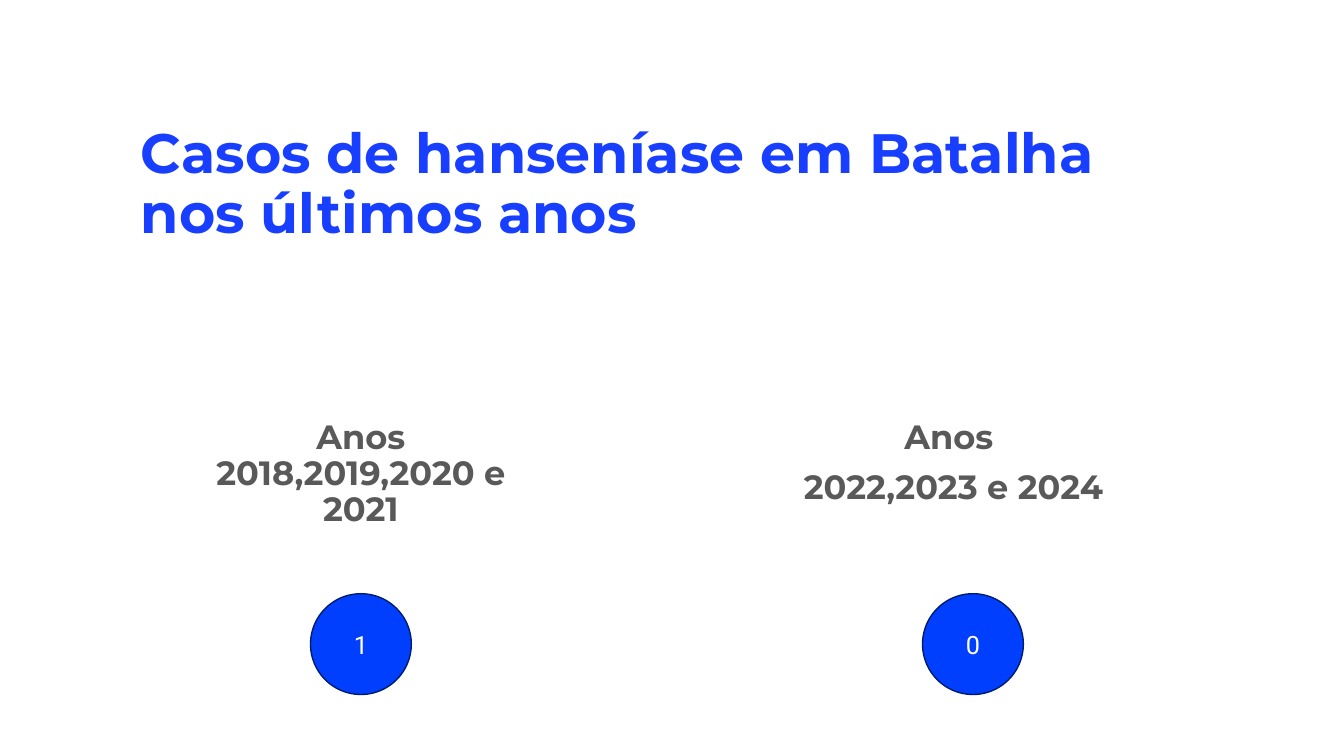
from pptx import Presentation
from pptx.dml.color import RGBColor
from pptx.enum.shapes import MSO_SHAPE
from pptx.enum.text import MSO_ANCHOR, PP_ALIGN
from pptx.util import Inches, Pt

TITLE = "Casos de hanseníase em Batalha nos últimos anos"
# Label lines, label left, number of cases, circle left
PERIODS = [
    (["Anos 2018,2019,2020 e 2021"], 1.81, "1", 3.08),
    (["Anos", " 2022,2023 e 2024"], 7.64, "0", 9.15),
]
COLORS = {
    "title": "183EFF",
    "label": "595959",
    "circle": "013FFE",
    "outline": "001C6F",
    "count": "FFFFFF",
}
LABEL_TOP, LABEL_WIDTH, LABEL_HEIGHT = 4.12, 3.54, 0.42
CIRCLE_TOP, CIRCLE_SIZE = 5.89, 1


def color(name):
    return RGBColor.from_string(COLORS[name])


def write(frame, lines, font_name, size, color_name, bold, align, spacing):
    frame.word_wrap = True
    frame.text = "\n".join(lines)
    for index, paragraph in enumerate(frame.paragraphs):
        paragraph.alignment = align
        paragraph.line_spacing = spacing
        if index:
            paragraph.space_before = Pt(10)
        for run in paragraph.runs:
            run.font.name = font_name
            run.font.size = Pt(size)
            run.font.bold = bold
            run.font.color.rgb = color(color_name)


def add_heading(slide, lines, box, size, color_name, align):
    heading = slide.shapes.add_textbox(*map(Inches, box))
    write(heading.text_frame, lines, "Montserrat", size, color_name, True, align, 0.9)


def add_count(slide, count, left):
    circle = slide.shapes.add_shape(
        MSO_SHAPE.OVAL, *map(Inches, (left, CIRCLE_TOP, CIRCLE_SIZE, CIRCLE_SIZE))
    )
    circle.shadow.inherit = False
    circle.fill.solid()
    circle.fill.fore_color.rgb = color("circle")
    circle.line.color.rgb = color("outline")
    circle.line.width = Pt(1)
    circle.text_frame.vertical_anchor = MSO_ANCHOR.MIDDLE
    write(circle.text_frame, [count], "Roboto", 18, "count", False, PP_ALIGN.CENTER, 1.0)


def main():
    deck = Presentation()
    deck.slide_width, deck.slide_height = Inches(13.33), Inches(7.5)
    slide = deck.slides.add_slide(deck.slide_layouts[6])

    add_heading(slide, [TITLE], (1.3, 1.2, 10.53, 0.7), 39.6, "title", PP_ALIGN.LEFT)
    for label, label_left, count, circle_left in PERIODS:
        label_box = (label_left, LABEL_TOP, LABEL_WIDTH, LABEL_HEIGHT)
        add_heading(slide, label, label_box, 24, "label", PP_ALIGN.CENTER)
        add_count(slide, count, circle_left)

    deck.save("out.pptx")


if __name__ == "__main__":
    main()
